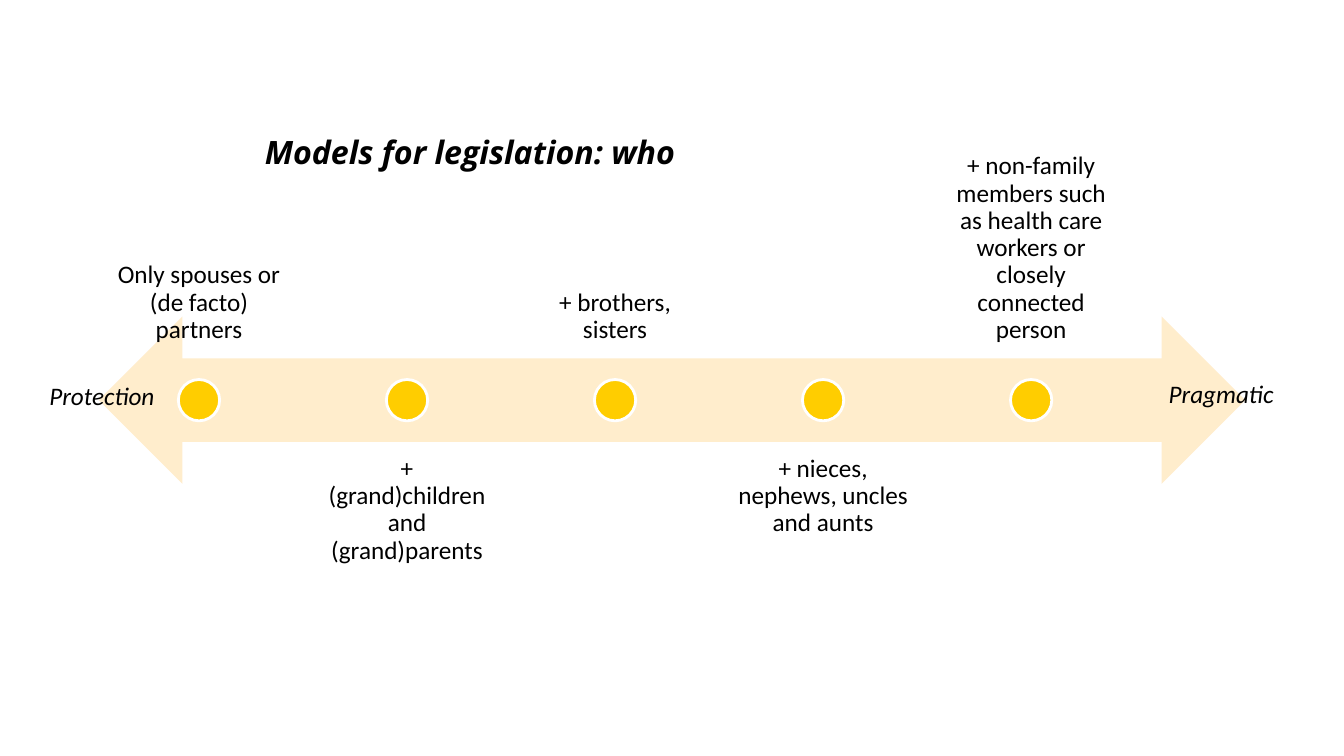
from pptx import Presentation
from pptx.dml.color import RGBColor
from pptx.enum.shapes import MSO_SHAPE
from pptx.enum.text import MSO_ANCHOR, PP_ALIGN
from pptx.util import Inches, Pt

TITLE = "Models for legislation: who"
STAGES = [
    "Only spouses or (de facto) partners",
    "+ (grand)children and (grand)parents",
    "+ brothers, sisters",
    "+ nieces, nephews, uncles and aunts",
    "+ non-family members such as health care workers or closely connected person",
]
ENDS = [("Pragmatic", 11.6, 3.75), ("Protection", 0.49, 3.77)]

BLACK = RGBColor(0, 0, 0)
WHITE = RGBColor(255, 255, 255)
CREAM = RGBColor(0xFF, 0xED, 0xCC)
GOLD = RGBColor(0xFF, 0xCD, 0x00)
ARROW, DOT = MSO_SHAPE.LEFT_RIGHT_ARROW, MSO_SHAPE.OVAL
TOP, BOTTOM = MSO_ANCHOR.TOP, MSO_ANCHOR.BOTTOM
LEFT, CENTER = PP_ALIGN.LEFT, PP_ALIGN.CENTER

FIRST, LAST = 0.99, 9.25
STEP = (LAST - FIRST) / (len(STAGES) - 1)
WIDE, HIGH = 1.97, 1.66
ABOVE, BELOW = 1.89, 4.38
SIZE, MIDDLE = 0.41, 3.97


def add_text(slide, text, box, inset=(0, 0), anchor=TOP, align=LEFT,
             spacing=1.0, size=18, font="Calibri", bold=False, italic=False):
    frame = slide.shapes.add_textbox(*map(Inches, box)).text_frame
    frame.word_wrap = True
    frame.vertical_anchor = anchor
    frame.margin_left = frame.margin_right = Inches(inset[0])
    frame.margin_top = frame.margin_bottom = Inches(inset[1])
    para = frame.paragraphs[0]
    para.alignment = align
    para.line_spacing = spacing
    run = para.add_run()
    run.text = text
    run.font.name, run.font.size = font, Pt(size)
    run.font.bold, run.font.italic = bold, italic
    run.font.color.rgb = BLACK


def add_form(slide, kind, box, fill):
    form = slide.shapes.add_shape(kind, *map(Inches, box))
    form.shadow.inherit = False
    form.fill.solid()
    form.fill.fore_color.rgb = fill
    form.line.fill.background()
    return form


def main():
    deck = Presentation()
    deck.slide_width, deck.slide_height = Inches(13.34), Inches(7.5)
    slide = deck.slides.add_slide(deck.slide_layouts[6])

    add_text(slide, TITLE, (2.53, 1.31, 8.27, 1.37), inset=(0.1, 0.05),
             spacing=0.9, size=23, font="Open Sans", bold=True, italic=True)
    add_form(slide, ARROW, (0.98, 3.14, 11.38, HIGH), CREAM)

    for i, stage in enumerate(STAGES):
        left = FIRST + i * STEP
        top, anchor = (BELOW, TOP) if i % 2 else (ABOVE, BOTTOM)
        add_text(slide, stage, (left, top, WIDE, HIGH), inset=(0.14, 0.14),
                 anchor=anchor, align=CENTER, spacing=0.9)
        dot = add_form(slide, DOT, (left + (WIDE - SIZE) / 2,
                                    MIDDLE - SIZE / 2, SIZE, SIZE), GOLD)
        dot.line.color.rgb = WHITE
        dot.line.width = Pt(2)

    for word, left, top in ENDS:
        add_text(slide, word, (left, top, 1.74, 0.3), italic=True)

    deck.save("out.pptx")


if __name__ == "__main__":
    main()
